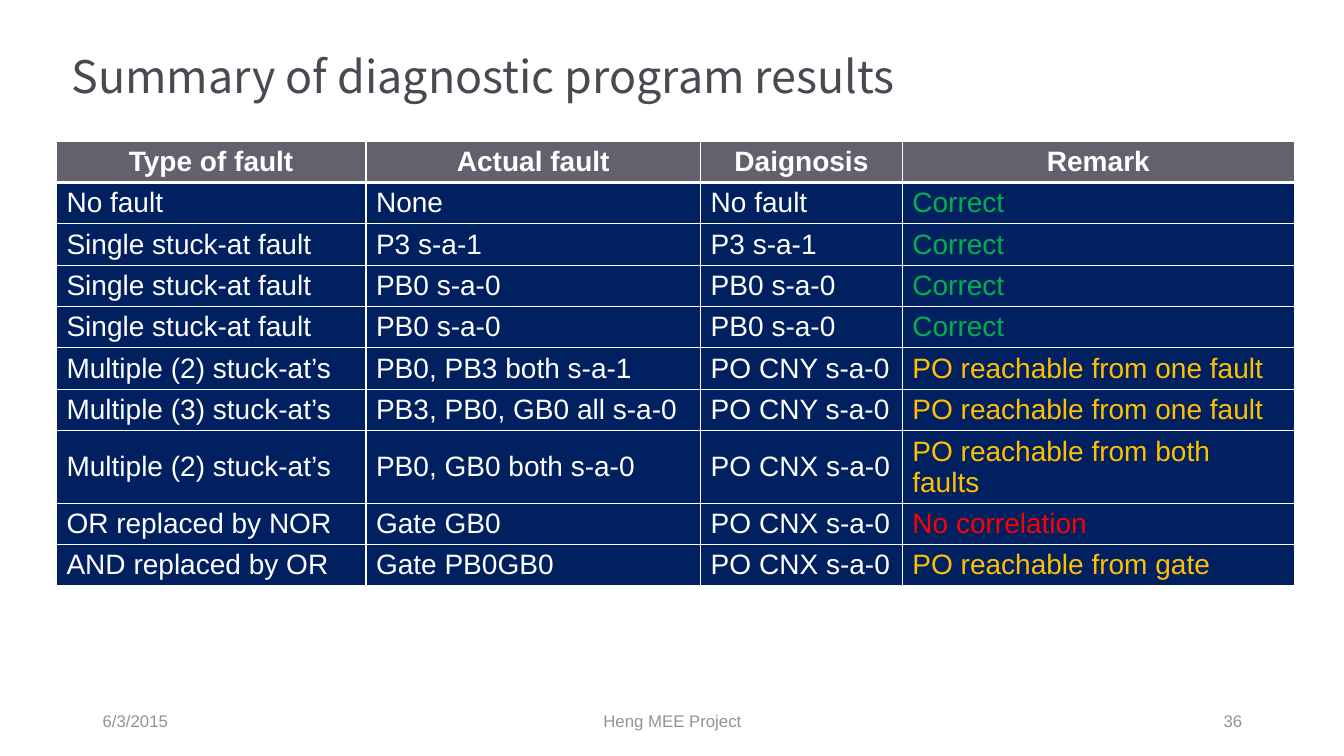
from lxml.etree import SubElement
from pptx import Presentation
from pptx.dml.color import RGBColor
from pptx.enum.text import MSO_ANCHOR, PP_ALIGN
from pptx.oxml.ns import qn
from pptx.util import Inches, Pt

COLORS = {
    "title": "4B4852", "head": "64606D", "body": "002060", "white": "FFFFFF",
    "good": "00B050", "part": "FFC000", "bad": "FF0000", "foot": "929393",
}
HEADS = ["Type of fault", "Actual fault", "Daignosis", "Remark"]
WIDTHS = [3.07, 3.32, 2, 3.89]
ROW_HEIGHT = 0.41
ROWS = [
    ("No fault", "None", "No fault", "Correct", "good"),
    ("Single stuck-at fault", "P3 s-a-1", "P3 s-a-1", "Correct", "good"),
    ("Single stuck-at fault", "PB0 s-a-0", "PB0 s-a-0", "Correct", "good"),
    ("Single stuck-at fault", "PB0 s-a-0", "PB0 s-a-0", "Correct", "good"),
    ("Multiple (2) stuck-at’s", "PB0, PB3 both s-a-1", "PO CNY s-a-0",
     "PO reachable from one fault", "part"),
    ("Multiple (3) stuck-at’s", "PB3, PB0, GB0 all s-a-0", "PO CNY s-a-0",
     "PO reachable from one fault", "part"),
    ("Multiple (2) stuck-at’s", "PB0, GB0 both s-a-0", "PO CNX s-a-0",
     "PO reachable from both faults", "part"),
    ("OR replaced by NOR", "Gate GB0", "PO CNX s-a-0", "No correlation", "bad"),
    ("AND replaced by OR", "Gate PB0GB0", "PO CNX s-a-0",
     "PO reachable from gate", "part"),
]


class Deck:
    def __init__(self, width, height, font):
        self.prs = Presentation()
        self.prs.slide_width = Inches(width)
        self.prs.slide_height = Inches(height)
        self.font = font
        self.slide = self.prs.slides.add_slide(self.prs.slide_layouts[5])

    def add_run(self, para, text, size, color, bold=False, font=None,
                align=PP_ALIGN.LEFT):
        para.alignment = align
        run = para.add_run()
        run.text = text
        run.font.name = font or self.font
        run.font.size = Pt(size)
        run.font.bold = bold
        run.font.color.rgb = RGBColor.from_string(COLORS[color])

    def title(self, text, box, size, font):
        shape = self.slide.shapes.title
        shape.left, shape.top, shape.width, shape.height = map(Inches, box)
        frame = shape.text_frame
        frame.word_wrap = True
        frame.vertical_anchor = MSO_ANCHOR.BOTTOM
        para = frame.paragraphs[0]
        para.line_spacing = 0.9
        self.add_run(para, text, size, "title", font=font)

    def text(self, text, box, size, color, align):
        frame = self.slide.shapes.add_textbox(*map(Inches, box)).text_frame
        frame.word_wrap = True
        frame.vertical_anchor = MSO_ANCHOR.MIDDLE
        self.add_run(frame.paragraphs[0], text, size, color, align=align)

    def border(self, cell, **widths):
        """Draw white cell sides; widths in points are keyed L, R, T, B."""
        props = cell._tc.get_or_add_tcPr()
        for side, width in widths.items():
            line = SubElement(props, qn(f"a:ln{side}"), w=str(Pt(width)))
            fill = SubElement(line, qn("a:solidFill"))
            SubElement(fill, qn("a:srgbClr"), val=COLORS["white"])

    def cell(self, cell, text, fill, color, top=1, bottom=1, **style):
        self.border(cell, L=1, R=1, T=top, B=bottom)
        cell.fill.solid()
        cell.fill.fore_color.rgb = RGBColor.from_string(COLORS[fill])
        cell.vertical_anchor = MSO_ANCHOR.MIDDLE
        self.add_run(cell.text_frame.paragraphs[0], text, 20, color, **style)

    def table(self, left, top):
        count = len(ROWS) + 1
        table = self.slide.shapes.add_table(
            count, len(HEADS), Inches(left), Inches(top),
            Inches(sum(WIDTHS)), Inches(count * ROW_HEIGHT)).table
        table.horz_banding = False
        for col, width in zip(table.columns, WIDTHS):
            col.width = Inches(width)
        for row in table.rows:
            row.height = Inches(ROW_HEIGHT)
        for col, head in enumerate(HEADS):
            self.cell(table.cell(0, col), head, "head", "white", bottom=3,
                      bold=True, align=PP_ALIGN.CENTER)
        for row, (*texts, mark) in enumerate(ROWS, 1):
            for col, text in enumerate(texts):
                color = mark if HEADS[col] == "Remark" else "white"
                self.cell(table.cell(row, col), text, "body", color,
                          top=3 if row == 1 else 1)


def main():
    deck = Deck(13.33, 7.5, "Arial")
    deck.title("Summary of diagnostic program results",
               (0.61, 0.18, 12.09, 0.89), 32, "Noto Sans CJK SC")
    deck.table(0.56, 1.4)
    for text, left, width, align in [
        ("6/3/2015", 0.92, 3, PP_ALIGN.LEFT),
        ("Heng MEE Project", 4.42, 4.5, PP_ALIGN.CENTER),
        ("36", 9.42, 3, PP_ALIGN.RIGHT),
    ]:
        deck.text(text, (left, 6.95, width, 0.4), 12, "foot", align)
    deck.prs.save("out.pptx")


if __name__ == "__main__":
    main()
